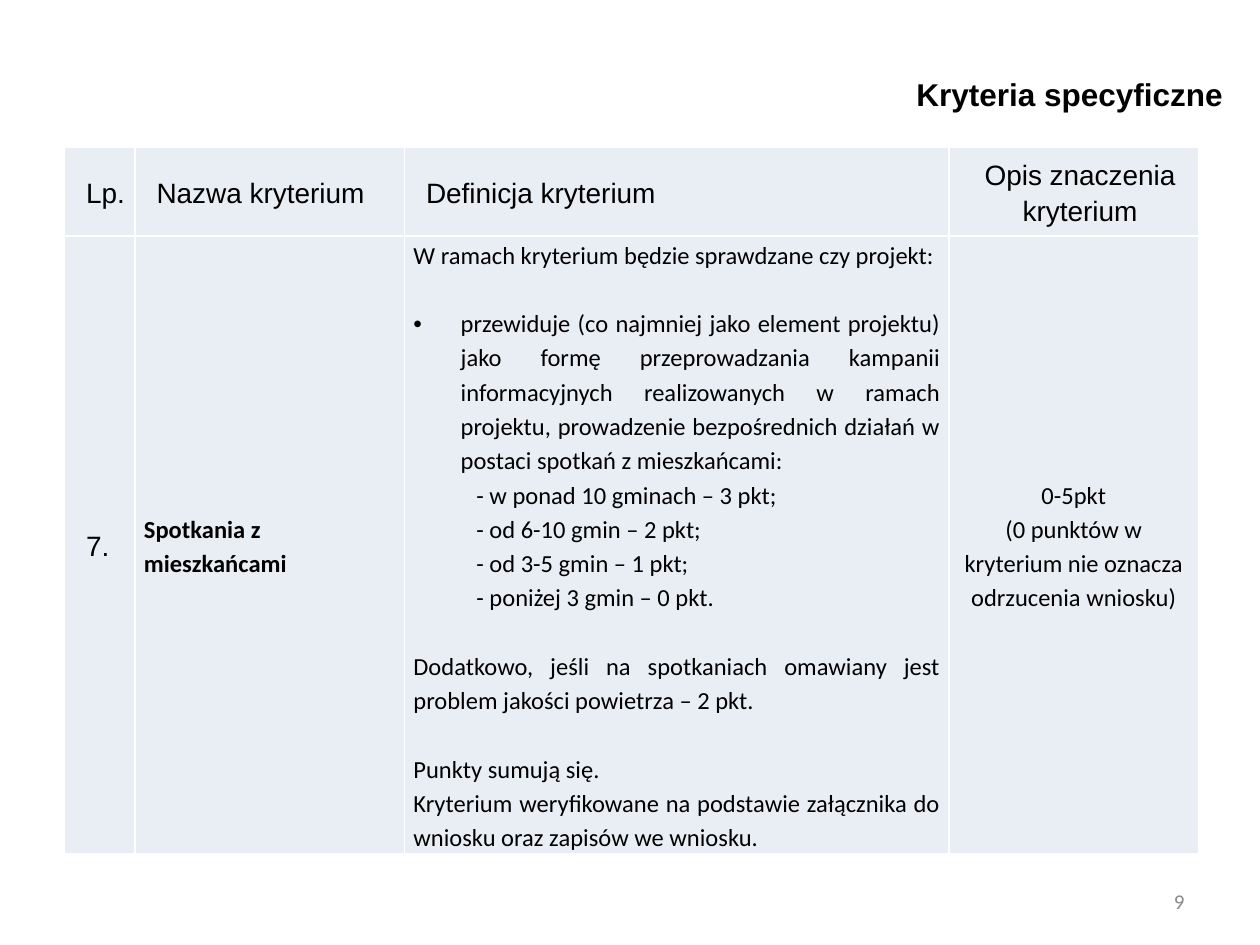
from pptx import Presentation
from pptx.dml.color import RGBColor
from pptx.enum import text as t
from pptx.oxml import parse_xml
from pptx.oxml.ns import nsdecls, qn
from pptx.util import Pt

BLACK = RGBColor(0x00, 0x00, 0x00)
GREY = RGBColor(0x89, 0x89, 0x89)
PALE_BLUE = RGBColor(0xE9, 0xED, 0xF4)
LEFT, CENTER = t.PP_ALIGN.LEFT, t.PP_ALIGN.CENTER
RIGHT, JUSTIFY = t.PP_ALIGN.RIGHT, t.PP_ALIGN.JUSTIFY
LINE = 19.6  # height of one 14 pt line at 1.15 spacing


def write(frame, text, size=14, font="Calibri", bold=False, color=BLACK,
          align=LEFT, spacing=1.15, before=0, after=0, indent=0, bullet=False):
    """Fill the frame's empty first paragraph, or add one, and return its run."""
    paragraph = frame.paragraphs[0]
    if paragraph.runs:
        paragraph = frame.add_paragraph()
    paragraph.alignment = align
    paragraph.line_spacing = spacing
    paragraph.space_before, paragraph.space_after = Pt(before), Pt(after)
    properties = paragraph._p.get_or_add_pPr()
    properties.set("marL", str(Pt(indent)))
    properties.set("indent", str(Pt(-indent if bullet else 0)))
    if bullet:
        properties.append(parse_xml(f'<a:buFont {nsdecls("a")} typeface="Arial"/>'))
        properties.append(parse_xml(f'<a:buChar {nsdecls("a")} char="•"/>'))
    run = paragraph.add_run()
    run.text = text
    run.font.size, run.font.name, run.font.bold = Pt(size), font, bold
    run.font.color.rgb = color
    return run


def style_cell(cell):
    cell.margin_left = cell.margin_right = Pt(5)
    cell.margin_top = cell.margin_bottom = 0
    cell.vertical_anchor = t.MSO_ANCHOR.MIDDLE
    for side in ("lnL", "lnR", "lnT", "lnB"):
        cell._tc.get_or_add_tcPr().append(parse_xml(
            f'<a:{side} {nsdecls("a")} w="{Pt(1)}"><a:solidFill>'
            f'<a:srgbClr val="FFFFFF"/></a:solidFill></a:{side}>'))
    cell.fill.solid()
    cell.fill.fore_color.rgb = PALE_BLUE


prs = Presentation()
prs.slide_width, prs.slide_height = Pt(720), Pt(540)
slide = prs.slides.add_slide(prs.slide_layouts[5])

title = slide.shapes.title
title.left, title.top, title.width, title.height = Pt(462), Pt(39), Pt(244), Pt(36)
title.text_frame.vertical_anchor = t.MSO_ANCHOR.TOP
write(title.text_frame, "Kryteria specyficzne", size=18, font="Arial", bold=True,
      align=RIGHT, spacing=1.0)

criteria = slide.shapes.add_table(2, 4, Pt(37), Pt(84), Pt(648), Pt(402)).table
for column, width in zip(criteria.columns, (40.3, 154, 311, 142.7)):
    column.width = Pt(width)
for row, height in zip(criteria.rows, (51, 351)):
    row.height = Pt(height)
for cell in criteria.iter_cells():
    style_cell(cell)

label = dict(size=16, font="Arial", indent=7.2, after=10)
headings = (("Lp.", LEFT), ("Nazwa kryterium", LEFT),
            ("Definicja kryterium", LEFT), ("Opis znaczenia kryterium", CENTER))
for column, (heading, align) in enumerate(headings):
    write(criteria.cell(0, column).text_frame, heading, align=align, **label)

number, name, definition, meaning = (cell.text_frame for cell in criteria.rows[1].cells)
write(number, "7.", **label)
write(name, "Spotkania z mieszkańcami", bold=True)

definition_lines = (
    ("W ramach kryterium będzie sprawdzane czy projekt:", {}),
    ("przewiduje (co najmniej jako element projektu) jako formę przeprowadzania "
     "kampanii informacyjnych realizowanych w ramach projektu, prowadzenie "
     "bezpośrednich działań w postaci spotkań z mieszkańcami:",
     dict(before=LINE, indent=27, bullet=True)),
    ("- w ponad 10 gminach – 3 pkt;", dict(indent=36)),
    ("- od 6-10 gmin – 2 pkt;", dict(indent=36)),
    ("- od 3-5 gmin – 1 pkt;", dict(indent=36)),
    ("- poniżej 3 gmin – 0 pkt.", dict(indent=36)),
    ("Dodatkowo, jeśli na spotkaniach omawiany jest problem jakości powietrza – 2 pkt.",
     dict(before=LINE)),
    ("Punkty sumują się.", dict(before=LINE)),
    ("Kryterium weryfikowane na podstawie załącznika do wniosku oraz zapisów we wniosku.",
     {}),
)
for line, layout in definition_lines:
    write(definition, line, align=JUSTIFY, **layout)

for line in ("0-5pkt", "(0 punktów w kryterium nie oznacza", "odrzucenia wniosku)"):
    write(meaning, line, align=CENTER)

page = slide.shapes.add_textbox(Pt(516), Pt(500.5), Pt(168), Pt(28.75)).text_frame
page.word_wrap = True
page.vertical_anchor = t.MSO_ANCHOR.MIDDLE
page_number = write(page, "9", size=12, color=GREY, align=RIGHT, spacing=1.0)
# Turn the run into a slide number field, counted from 9
page_number._r.tag = qn("a:fld")
page_number._r.set("id", "{B6F15528-21DE-4FAA-801E-634DDDAF4B2B}")
page_number._r.set("type", "slidenum")
prs.element.set("firstSlideNum", "9")

prs.save("out.pptx")
